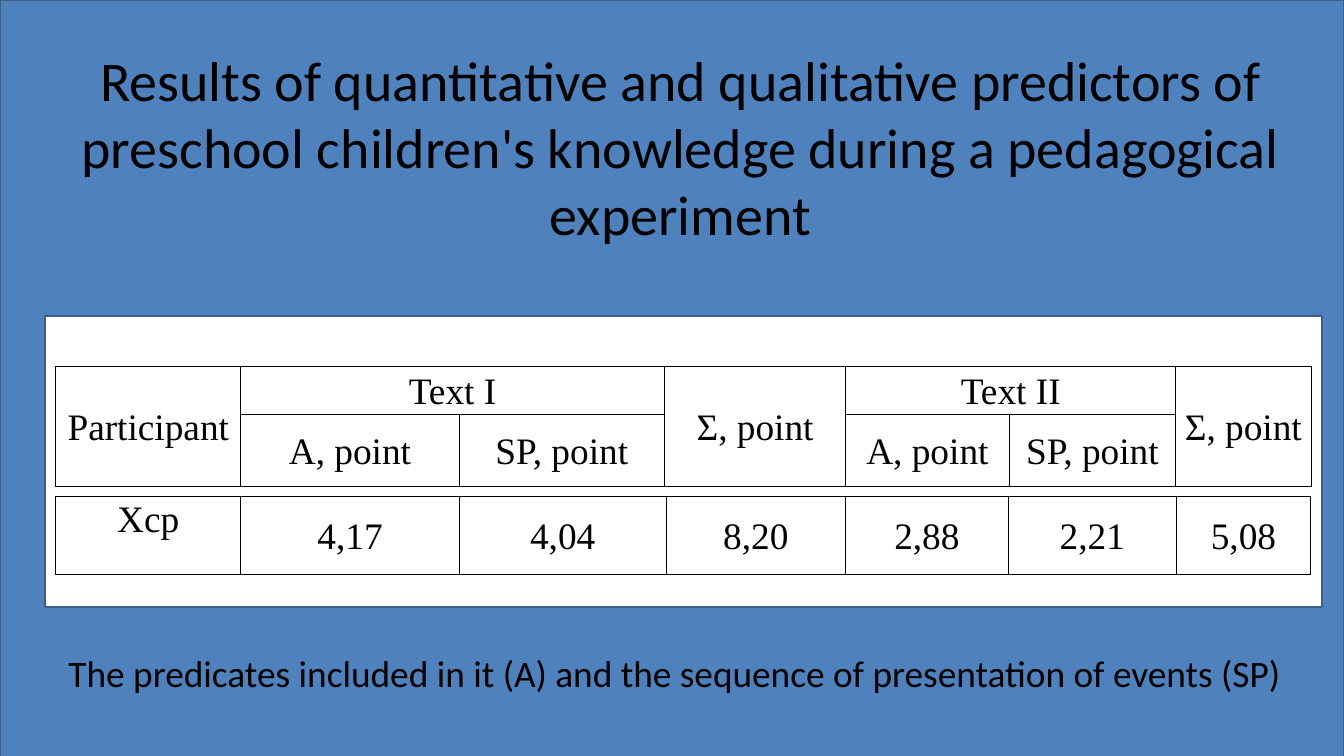
from lxml import etree
from pptx import Presentation
from pptx import util as u
from pptx.dml.color import RGBColor
from pptx.enum import shapes, text
from pptx.oxml import ns

BLUE, BLUE_EDGE, WHITE, BLACK = "4F81BD", "3A5F8C", "FFFFFF", "000000"
CENTER, MIDDLE = text.PP_ALIGN.CENTER, text.MSO_ANCHOR.MIDDLE


def color(hex_string):
    return RGBColor.from_string(hex_string)


def write(frame, words, size=40, font="Calibri", align=CENTER, spacing=None):
    paragraph = frame.paragraphs[0]
    paragraph.alignment = align
    paragraph.line_spacing = spacing
    run = paragraph.add_run()
    run.text = words
    run.font.size = u.Pt(size)
    run.font.name = font
    run.font.color.rgb = color(BLACK)


class ResultsSlide:
    """Holds the slide and the style shared by its elements."""

    table_font = "Times New Roman"
    cell_margin = u.Cm(0.17)

    def __init__(self, deck):
        self.slide = deck.slides.add_slide(deck.slide_layouts[5])

    def panel(self, left, top, width, height, fill, behind=False):
        box = self.slide.shapes.add_shape(
            shapes.MSO_SHAPE.RECTANGLE, *map(u.Cm, (left, top, width, height)))
        box.shadow.inherit = False
        box.fill.solid()
        box.fill.fore_color.rgb = color(fill)
        box.line.color.rgb = color(BLUE_EDGE)
        box.line.width = u.Pt(2)
        if behind:
            self.slide.shapes._spTree.insert(2, box._element)

    def title(self, left, top, width, height, words):
        heading = self.slide.shapes.title
        heading.left, heading.top = u.Cm(left), u.Cm(top)
        heading.width, heading.height = u.Cm(width), u.Cm(height)
        frame = heading.text_frame
        frame.word_wrap = True
        frame.auto_size = text.MSO_AUTO_SIZE.NONE
        frame.vertical_anchor = text.MSO_ANCHOR.BOTTOM
        write(frame, words, size=60)

    def caption(self, left, top, width, height, words):
        box = self.slide.shapes.add_textbox(*map(u.Cm, (left, top, width, height)))
        frame = box.text_frame
        frame.word_wrap = False
        frame.auto_size = text.MSO_AUTO_SIZE.SHAPE_TO_FIT_TEXT
        frame.vertical_anchor = MIDDLE
        write(frame, words, align=text.PP_ALIGN.LEFT)

    def border(self, cell):
        properties = cell._tc.get_or_add_tcPr()
        for index, side in enumerate(("lnL", "lnR", "lnT", "lnB")):
            line = etree.Element(ns.qn(f"a:{side}"), w=str(u.Pt(1)))
            fill = etree.SubElement(line, ns.qn("a:solidFill"))
            etree.SubElement(fill, ns.qn("a:srgbClr"), val=BLACK)
            properties.insert(index, line)

    def table(self, left, top, widths, heights, rows, merges=()):
        grid = self.slide.shapes.add_table(
            len(heights), len(widths),
            *map(u.Cm, (left, top, sum(widths), sum(heights)))).table
        grid.first_row = grid.horz_banding = False
        for column, width in zip(grid.columns, widths):
            column.width = u.Cm(width)
        for row, height in zip(grid.rows, heights):
            row.height = u.Cm(height)
        for start, end in merges:
            grid.cell(*start).merge(grid.cell(*end))
        for row, labels in zip(grid.rows, rows):
            for cell, label in zip(row.cells, labels):
                cell.fill.background()
                self.border(cell)
                cell.margin_left = cell.margin_right = self.cell_margin
                cell.margin_top = cell.margin_bottom = 0
                cell.vertical_anchor = MIDDLE
                if label:
                    write(cell.text_frame, label, font=self.table_font, spacing=1.07)
        return grid


def main():
    deck = Presentation()
    deck.slide_width, deck.slide_height = u.Cm(50.8), u.Cm(28.58)
    results = ResultsSlide(deck)

    # Background and heading
    results.panel(0, 0, 50.8, 29.74, BLUE, behind=True)
    results.title(2.54, -1.07, 46.36, 10.52,
                  "Results of quantitative and qualitative predictors of "
                  "preschool children's knowledge during a pedagogical experiment")

    # White panel with the column headings
    results.panel(1.7, 11.96, 48.26, 11, WHITE)
    results.table(
        2.11, 13.87, (6.99, 8.26, 7.75, 6.86, 6.17, 6.3, 5.11), (1.8, 2.72),
        (("Participant", "Text I", "", "Σ, point", "Text II", "", "Σ, point"),
         ("", "A, point", "SP, point", "", "A, point", "SP, point", "")),
        merges=[((0, column), (1, column)) for column in (0, 3, 6)]
        + [((0, column), (0, column + 1)) for column in (1, 4)])

    # Mean scores
    means = results.table(
        2.11, 18.75, (6.99, 8.26, 7.82, 6.78, 6.15, 6.35, 5.08), (2.97,),
        (("Xср", "4,17", "4,04", "8,20", "2,88", "2,21", "5,08"),))
    means.cell(0, 0).vertical_anchor = text.MSO_ANCHOR.TOP

    # Explanation of the abbreviations
    results.caption(2.34, 24.43, 46.89, 1.96,
                    "The predicates included in it (A) and the sequence of "
                    "presentation of events (SP)")

    deck.save("out.pptx")


if __name__ == "__main__":
    main()
